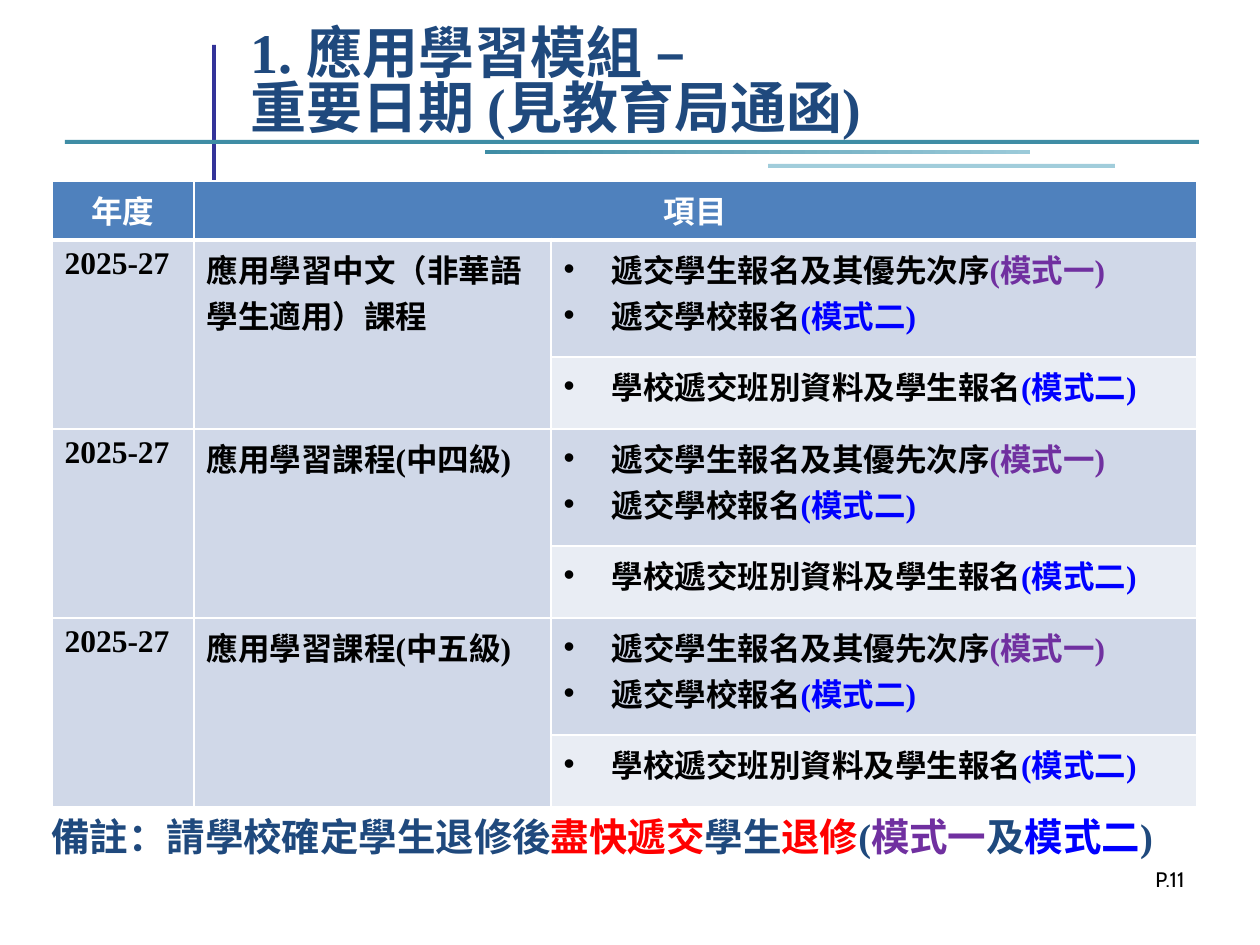
import pptx
import pptx.util
import pptx.dml.color
import pptx.enum.shapes
import pptx.enum.text
import pptx.oxml
import pptx.oxml.ns

PX = 914400 / 126
COLORS = {
    "navy": "1F497D", "red": "FF0000", "purple": "7030A0", "blue": "0000FF",
    "black": "000000", "white": "FFFFFF", "header": "4F81BD",
    "band": "D0D8E8", "light": "E9EDF4", "indigo": "333399",
    "teal": "3F8DA5", "mist": "9BCAD9", "pale": "A1CDDB",
}
RGB = {k: pptx.dml.color.RGBColor.from_string(v) for k, v in COLORS.items()}
NS = pptx.oxml.ns.nsdecls("a")
ALIGN = pptx.enum.text.PP_ALIGN
ANCHOR = pptx.enum.text.MSO_ANCHOR


def emu(*lengths):
    return [pptx.util.Emu(round(n * PX)) for n in lengths]


def add_runs(p, runs, size, name="Times New Roman", bold=True):
    fmt = {"size": pptx.util.Pt(size), "name": name, "bold": bold}
    for text, color in runs:
        r = p.add_run()
        r.text = text
        for key, value in fmt.items():
            setattr(r.font, key, value)
        r.font.color.rgb = RGB[color]
        r.font._element.append(pptx.oxml.parse_xml(
            f'<a:ea {NS} typeface="Noto Sans CJK SC"/>'))


prs = pptx.Presentation()
prs.slide_width, prs.slide_height = emu(1260, 945)
s = prs.slides.add_slide(prs.slide_layouts[6])

for box, colors in [
    ((212, 45, 4, 145), ["indigo"]),
    ((65, 140, 1134, 4), ["teal"]),
    ((485, 150, 545, 4), ["teal", "mist"]),
    ((768, 164, 347, 4), ["pale"]),
]:
    sp = s.shapes.add_shape(pptx.enum.shapes.MSO_SHAPE.RECTANGLE, *emu(*box))
    sp.shadow.inherit = False
    sp.line.fill.background()
    if len(colors) == 1:
        sp.fill.solid()
        sp.fill.fore_color.rgb = RGB[colors[0]]
    else:
        sp.fill.gradient()
        sp.fill.gradient_angle = 0
        for i, stop in enumerate(sp.fill.gradient_stops):
            stop.position = i
            stop.color.rgb = RGB[colors[i]]

title = s.shapes.add_textbox(*emu(238, 35, 987, 105))
note = s.shapes.add_textbox(*emu(39, 813, 1158, 106))
page = s.shapes.add_textbox(*emu(903, 860, 294, 66))
for sp, fmt in [
    (title, {"vertical_anchor": ANCHOR.BOTTOM, "margin_bottom": 0}),
    (note, {"margin_top": 0}),
    (page, {}),
]:
    for key, value in {"word_wrap": True, **fmt}.items():
        setattr(sp.text_frame, key, value)

p = title.text_frame.paragraphs[0]
p.line_spacing = 0.83
add_runs(p, [("1. 應用學習模組 – ", "navy")], 32)
p.add_line_break()
add_runs(p, [("重要日期 (見教育局通函)", "navy")], 32)

add_runs(note.text_frame.paragraphs[0], [
    ("備註：請學校確定學生退修後", "navy"), ("盡快遞交", "red"),
    ("學生", "navy"), ("退修", "red"), ("(", "navy"), ("模式一", "purple"),
    ("及", "navy"), ("模式二", "blue"), (")", "navy"),
], 22)

p = page.text_frame.paragraphs[0]
p.alignment = ALIGN.RIGHT
add_runs(p, [("P.11", "black")], 12, "Cabin", False)

courses = ["應用學習中文（非華語學生適用）課程", "應用學習課程(中四級)", "應用學習課程(中五級)"]
mode1, mode2 = ("(模式一)", "purple"), ("(模式二)", "blue")
applications = [
    [("遞交學生報名及其優先次序", "black"), mode1],
    [("遞交學校報名", "black"), mode2],
]
class_data = [[("學校遞交班別資料及學生報名", "black"), mode2]]

row_heights = [59] + [117, 72] * len(courses)
col_widths = [142, 357, 646]
table = s.shapes.add_table(
    len(row_heights), len(col_widths),
    *emu(52, 181, sum(col_widths), sum(row_heights))).table
for row, height in zip(table.rows, emu(*row_heights)):
    row.height = height
for col, width in zip(table.columns, emu(*col_widths)):
    col.width = width

for i in range(len(row_heights)):
    for j in range(len(col_widths)):
        cell = table.cell(i, j)
        tcPr = cell._tc.get_or_add_tcPr()
        for side in "LRTB":
            thick = (i == 0 and side == "B") or (i == 1 and side == "T")
            tcPr.append(pptx.oxml.parse_xml(
                f'<a:ln{side} {NS} w="{38100 if thick else 12700}"><a:solidFill>'
                f'<a:srgbClr val="{COLORS["white"]}"/></a:solidFill></a:ln{side}>'))
        fill = "header" if i == 0 else "light" if j == 2 and i % 2 == 0 else "band"
        cell.fill.solid()
        cell.fill.fore_color.rgb = RGB[fill]

table.cell(0, 1).merge(table.cell(0, 2))
for j, text in enumerate(["年度", "項目"]):
    p = table.cell(0, j).text_frame.paragraphs[0]
    p.alignment = ALIGN.CENTER
    add_runs(p, [(text, "white")], 18, "Noto Sans CJK SC")

for k, course in enumerate(courses):
    top = 1 + 2 * k
    for j, text in enumerate(["2025-27", course]):
        table.cell(top, j).merge(table.cell(top + 1, j))
        add_runs(table.cell(top, j).text_frame.paragraphs[0], [(text, "black")], 18)
    for i, items in enumerate([applications, class_data]):
        tf = table.cell(top + i, 2).text_frame
        for n, runs in enumerate(items):
            p = tf.add_paragraph() if n else tf.paragraphs[0]
            pPr = p._p.get_or_add_pPr()
            indent = emu(48)[0]
            pPr.set("marL", str(indent))
            pPr.set("indent", str(-indent))
            pPr.append(pptx.oxml.parse_xml(f'<a:buFont {NS} typeface="Arial"/>'))
            pPr.append(pptx.oxml.parse_xml(f'<a:buChar {NS} char="•"/>'))
            add_runs(p, runs, 18)

prs.save("out.pptx")
